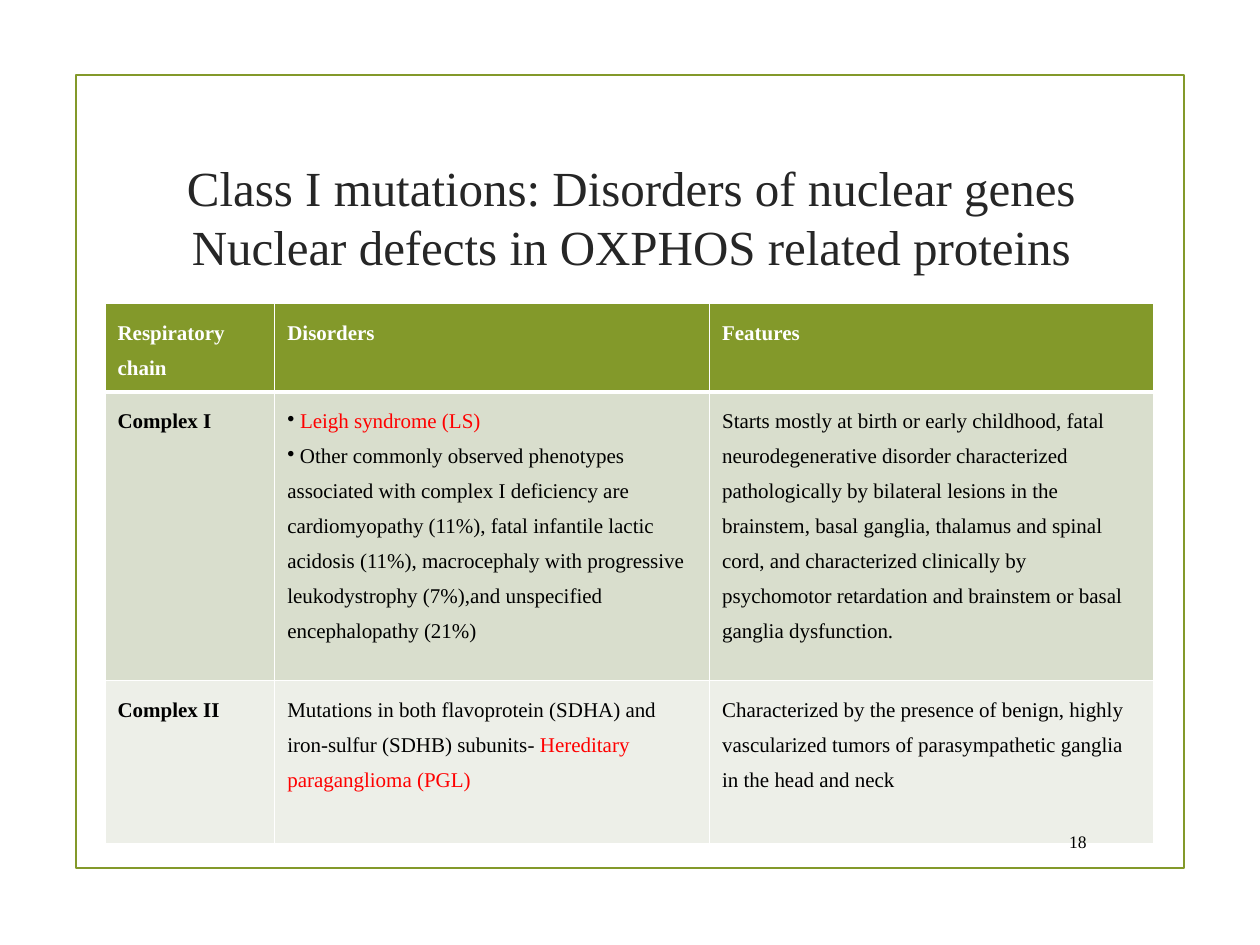
import pptx
import pptx.dml.color
import pptx.enum.shapes
import pptx.enum.text
import pptx.oxml
import pptx.oxml.ns
import pptx.util

Pt = pptx.util.Pt
RGBColor = pptx.dml.color.RGBColor
ALIGN = pptx.enum.text.PP_ALIGN
MIDDLE = pptx.enum.text.MSO_ANCHOR.MIDDLE

OLIVE = RGBColor(0x83, 0x99, 0x2A)
DARK = RGBColor(0x26, 0x26, 0x26)
BLACK = RGBColor(0, 0, 0)
WHITE = RGBColor(0xFF, 0xFF, 0xFF)
RED = RGBColor(0xFF, 0, 0)
ROW_FILLS = [OLIVE, RGBColor(0xD9, 0xDE, 0xCD), RGBColor(0xED, 0xEF, 0xE8)]

FONT = "Times New Roman"
COLUMN_WIDTHS = [97, 248.5, 254]
ROW_HEIGHTS = [46, 165, 93.5]

# A cell is a list of paragraphs, a paragraph a list of (text, format) runs.
HEADER = {"bold": True, "color": WHITE}
BOLD = {"bold": True}
ROWS = [
    [[[("Respiratory chain", HEADER)]], [[("Disorders", HEADER)]], [[("Features", HEADER)]]],
    [
        [[("Complex I", BOLD)]],
        [
            [(" ", {}), ("Leigh syndrome (LS)", {"color": RED})],
            [(" Other commonly observed phenotypes associated with complex I "
              "deficiency are cardiomyopathy (11%), fatal infantile lactic acidosis "
              "(11%), macrocephaly with progressive leukodystrophy (7%),and "
              "unspecified encephalopathy (21%)", {})],
        ],
        [[("Starts mostly at birth or early childhood, fatal neurodegenerative "
           "disorder characterized pathologically by bilateral lesions in the "
           "brainstem, basal ganglia, thalamus and spinal cord, and characterized "
           "clinically by psychomotor retardation and brainstem or basal ganglia "
           "dysfunction.", {})]],
    ],
    [
        [[("Complex II", BOLD)]],
        [[("Mutations in both flavoprotein (SDHA) and iron-sulfur (SDHB) subunits", {}),
          ("- ", {"italic": True}),
          ("Hereditary paraganglioma (PGL)", {"color": RED})]],
        [[("Characterized by the presence of benign, highly vascularized tumors of "
           "parasympathetic ganglia in the head and neck", {})]],
    ],
]


def add_run(p, text, size=12, color=BLACK, bold=False, italic=False):
    r = p.add_run()
    r.text = text
    r.font.name = FONT
    r.font.size = Pt(size)
    r.font.color.rgb = color
    r.font.bold = bold
    r.font.italic = italic


def add_text(s, box, lines, align, **fmt):
    """Add a middle-anchored text box; lines are parted by line breaks."""
    tf = s.shapes.add_textbox(*map(Pt, box)).text_frame
    tf.word_wrap = True
    tf.vertical_anchor = MIDDLE
    p = tf.paragraphs[0]
    p.alignment = align
    for i, line in enumerate(lines):
        if i:
            p.add_line_break()
        add_run(p, line, **fmt)


def add_frame(s):
    sp = s.shapes.add_shape(pptx.enum.shapes.MSO_SHAPE.RECTANGLE,
                            Pt(43.5), Pt(43), Pt(633), Pt(453))
    sp.shadow.inherit = False
    sp.fill.background()
    sp.line.color.rgb = OLIVE
    sp.line.width = Pt(1.25)


def set_bullet(p):
    p._p.get_or_add_pPr().append(pptx.oxml.parse_xml(
        f'<a:buChar {pptx.oxml.ns.nsdecls("a")} char="•"/>'))


def set_borders(cell, bottom, top):
    for side, width in {"L": 1, "R": 1, "T": top, "B": bottom}.items():
        cell._tc.get_or_add_tcPr().append(pptx.oxml.parse_xml(
            f'<a:ln{side} {pptx.oxml.ns.nsdecls("a")} w="{Pt(width)}">'
            f'<a:solidFill><a:srgbClr val="{WHITE}"/></a:solidFill></a:ln{side}>'))


def fill_cell(cell, paragraphs):
    tf = cell.text_frame
    for i, runs in enumerate(paragraphs):
        p = tf.add_paragraph() if i else tf.paragraphs[0]
        p.line_spacing = 1.5
        if len(paragraphs) > 1:
            set_bullet(p)
        for text, fmt in runs:
            add_run(p, text, **fmt)


def add_disorder_table(s):
    table = s.shapes.add_table(len(ROWS), len(COLUMN_WIDTHS), Pt(60), Pt(173.5),
                               Pt(sum(COLUMN_WIDTHS)), Pt(sum(ROW_HEIGHTS))).table
    for column, width in zip(table.columns, COLUMN_WIDTHS):
        column.width = Pt(width)
    for i, (row, height) in enumerate(zip(table.rows, ROW_HEIGHTS)):
        row.height = Pt(height)
        for cell, paragraphs in zip(row.cells, ROWS[i]):
            set_borders(cell, bottom=3 if i == 0 else 1, top=3 if i == 1 else 1)
            cell.fill.solid()
            cell.fill.fore_color.rgb = ROW_FILLS[i]
            fill_cell(cell, paragraphs)


def main():
    prs = pptx.Presentation()
    prs.slide_width, prs.slide_height = Pt(720), Pt(540)
    s = prs.slides.add_slide(prs.slide_layouts[6])
    add_frame(s)
    add_text(s, (93, 72, 535.5, 103),
             ["Class I mutations: Disorders of nuclear genes",
              "Nuclear defects in OXPHOS related proteins"],
             ALIGN.CENTER, size=28, color=DARK)
    add_disorder_table(s)
    add_text(s, (597, 469.5, 31, 22.5), ["18"], ALIGN.RIGHT, size=10)
    prs.save("out.pptx")


if __name__ == "__main__":
    main()
